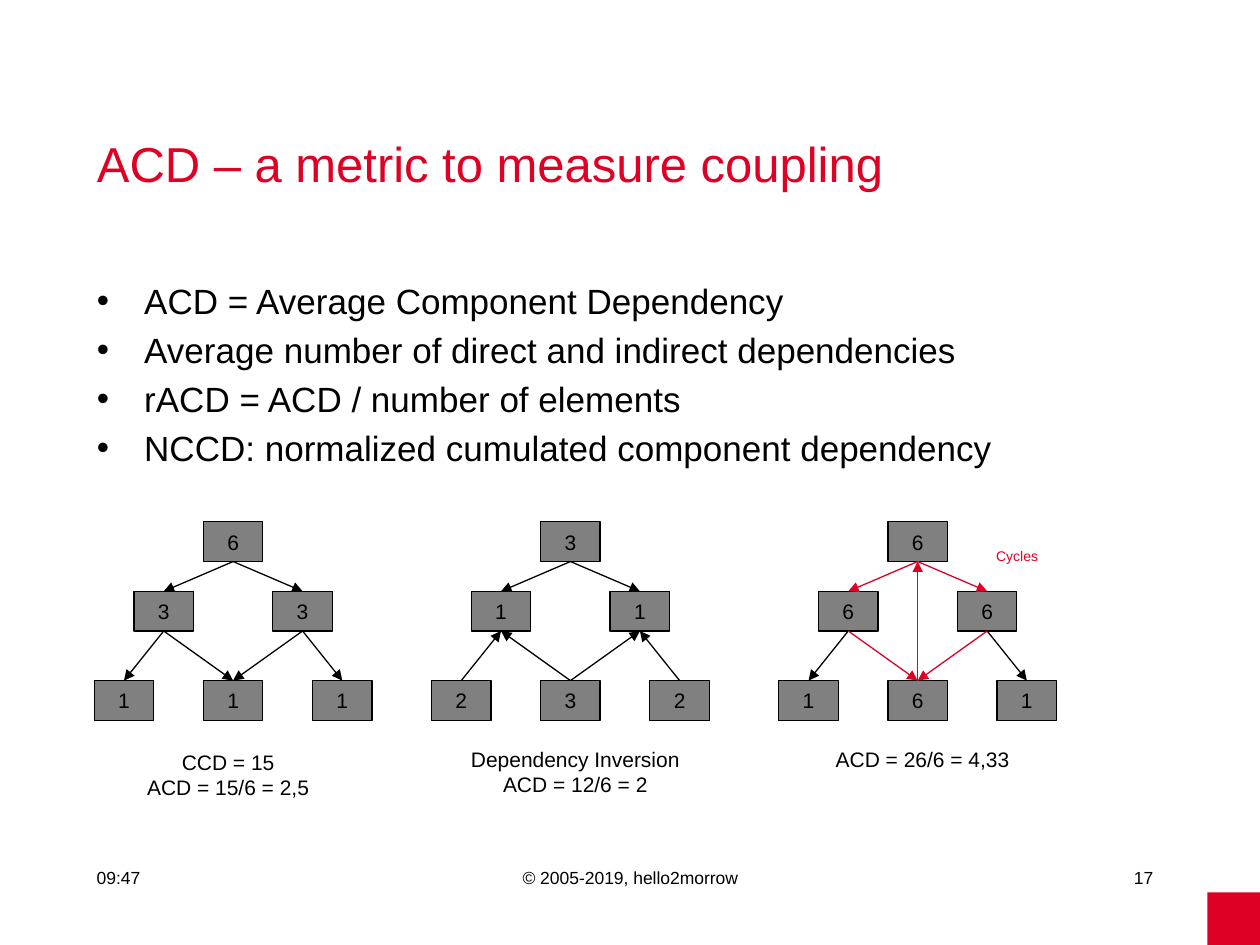
from lxml import etree
from pptx import Presentation
from pptx import util as u
from pptx.dml.color import RGBColor
from pptx.enum import shapes, text
from pptx.oxml import ns

RED = RGBColor(0xDF, 0x00, 0x25)
BLACK = RGBColor(0x00, 0x00, 0x00)
GRAY = RGBColor(0x80, 0x80, 0x80)

LEFT, CENTER, RIGHT = text.PP_ALIGN.LEFT, text.PP_ALIGN.CENTER, text.PP_ALIGN.RIGHT
TOP, MIDDLE = text.MSO_ANCHOR.TOP, text.MSO_ANCHOR.MIDDLE

NODE_W, NODE_H = 1.2, 0.8
NODE_PLACES = [(2.2, 10.52), (0.8, 11.92), (3.6, 11.92),
               (0, 13.72), (2.2, 13.72), (4.4, 13.72)]
UPPER_LINKS = [(0, 1), (0, 2)]
DOWN_LINKS = UPPER_LINKS + [(1, 3), (1, 4), (2, 4), (2, 5)]
INVERTED_LINKS = UPPER_LINKS + [(3, 1), (4, 1), (4, 2), (5, 2)]
CYCLE = [(0, 1), (0, 2), (1, 4), (2, 4), (4, 0)]

GRAPHS = [
    (1.9, "633111", DOWN_LINKS, []),
    (8.7, "311232", INVERTED_LINKS, []),
    (15.7, "666161", DOWN_LINKS + [(4, 0)], CYCLE),
]
CAPTIONS = [
    ("CCD = 15\nACD = 15/6 = 2,5", (1.9, 14.98, 5.4, 1.3)),
    ("Dependency Inversion\vACD = 12/6 = 2", (8.9, 14.93, 5.4, 1.28)),
    ("ACD = 26/6 = 4,33", (15.9, 14.93, 5.4, 0.77)),
]
FOOTERS = [
    ("09:47", (1.7, 17.36, 5.5, 1.27), LEFT),
    ("© 2005-2019, hello2morrow", (8.68, 17.36, 8.05, 1.27), CENTER),
    ("17", (18.2, 17.36, 5.3, 1.27), RIGHT),
]
TITLE = "ACD – a metric to measure coupling"
POINTS = """ACD = Average Component Dependency
Average number of direct and indirect dependencies
rACD = ACD / number of elements
NCCD: normalized cumulated component dependency"""


def apply(target, values):
    """Set every named attribute of the target."""
    for name, value in values.items():
        setattr(target, name, value)


def write(holder, words, size, color=BLACK, align=LEFT, anchor=TOP, wrap=True):
    """Put formatted words into a shape or placeholder."""
    frame = holder.text_frame
    frame.text = words
    apply(frame, {"word_wrap": wrap, "vertical_anchor": anchor,
                  "auto_size": text.MSO_AUTO_SIZE.NONE})
    for paragraph in frame.paragraphs:
        paragraph.alignment = align
        for run in paragraph.runs:
            apply(run.font, {"name": "Arial", "size": u.Pt(size)})
            run.font.color.rgb = color


def fill_placeholder(holder, words, place, size, **style):
    """Move a template placeholder and write its words."""
    sides = ("left", "top", "width", "height")
    apply(holder, dict(zip(sides, map(u.Cm, place))))
    write(holder, words, size, **style)
    holder.text_frame.paragraphs[0].space_before = u.Pt(0)


def add_label(slide, words, place, size, **style):
    """Add a text box."""
    label = slide.shapes.add_textbox(*map(u.Cm, place))
    write(label, words, size, **style)


def add_block(slide, place, color):
    """Add a plain rectangle without outline or shadow."""
    block = slide.shapes.add_shape(shapes.MSO_SHAPE.RECTANGLE, *map(u.Cm, place))
    block.shadow.inherit = False
    block.fill.solid()
    block.fill.fore_color.rgb = color
    block.line.fill.background()
    return block


def add_node(slide, count, left, top):
    """Add a component box showing its dependency count."""
    node = add_block(slide, (left, top, NODE_W, NODE_H), GRAY)
    node.line.color.rgb = BLACK
    node.line.width = u.Pt(0.75)
    write(node, count, 12, align=CENTER, anchor=MIDDLE, wrap=False)
    return node


def add_arrow(slide, source, target, color):
    """Join the facing sides of two nodes with an arrow."""
    start, end = (2, 0) if source.top < target.top else (0, 2)
    arrow = slide.shapes.add_connector(shapes.MSO_CONNECTOR.STRAIGHT, 0, 0, 0, 0)
    arrow.begin_connect(source, start)
    arrow.end_connect(target, end)
    arrow.line.color.rgb = color
    arrow.line.width = u.Pt(0.75)
    etree.SubElement(arrow.line._get_or_add_ln(), ns.qn("a:tailEnd"), type="triangle")
    etree.SubElement(arrow._element.spPr, ns.qn("a:effectLst"))


def add_graph(slide, left, counts, links, cycle):
    """Add one dependency graph with its cyclic links in red."""
    nodes = [add_node(slide, count, left + x, y)
             for count, (x, y) in zip(counts, NODE_PLACES)]
    for link in links:
        source, target = (nodes[index] for index in link)
        add_arrow(slide, source, target, RED if link in cycle else BLACK)


def main():
    """Build and save the slide."""
    deck = Presentation()
    apply(deck, {"slide_width": u.Cm(25.4), "slide_height": u.Cm(19.05)})
    slide = deck.slides.add_slide(deck.slide_layouts[1])
    add_block(slide, (24.34, 17.99, 1.06, 1.06), RED)
    for words, place, align in FOOTERS:
        add_label(slide, words, place, 10, align=align)
    fill_placeholder(slide.shapes.title, TITLE, (1.7, 2.12, 21.8, 2.33), 28,
                     color=RED, anchor=MIDDLE)
    fill_placeholder(slide.placeholders[1], POINTS, (1.7, 5.5, 21.8, 4.02), 20)
    for graph in GRAPHS:
        add_graph(slide, *graph)
    for words, place in CAPTIONS:
        add_label(slide, words, place, 12, align=CENTER)
    add_label(slide, "Cycles", (19.83, 10.92, 1.35, 0.6), 8, color=RED, wrap=False)
    deck.save("out.pptx")


if __name__ == "__main__":
    main()
